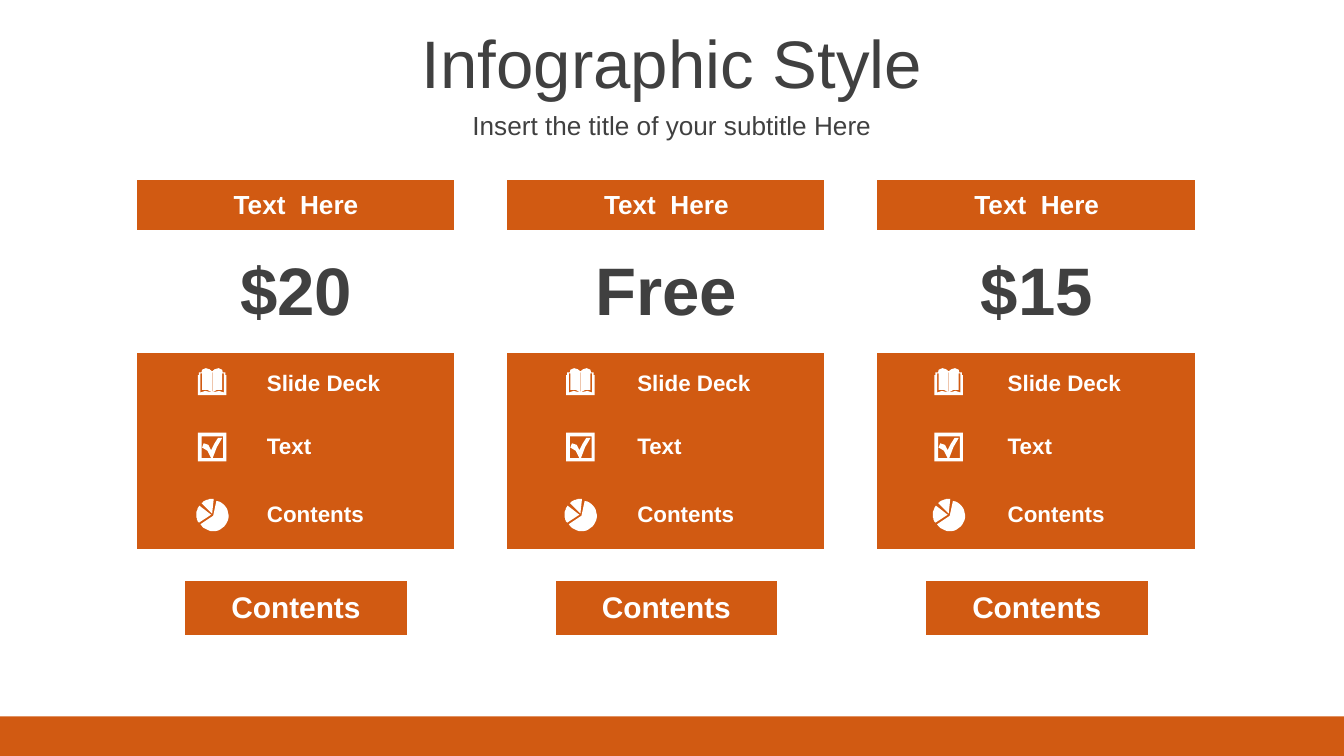
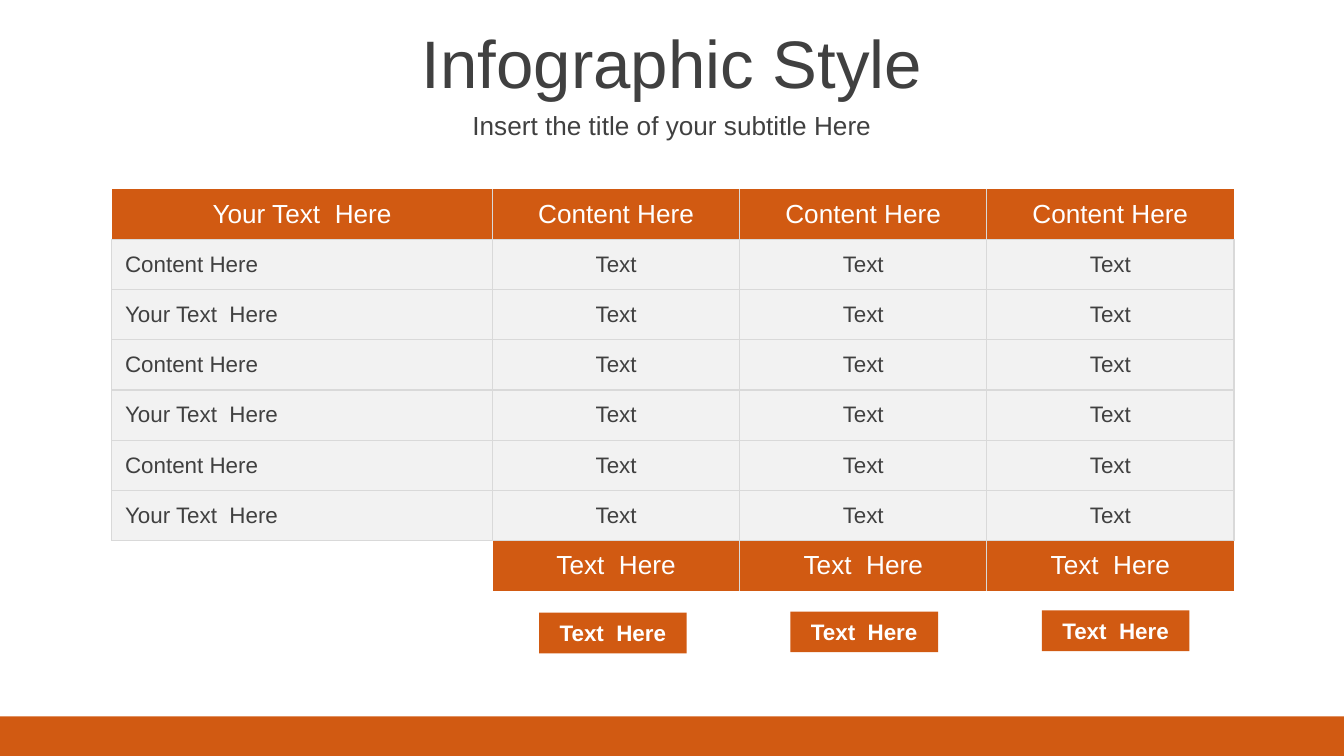
from dataclasses import dataclass
from math import cos, radians, sin

from lxml import etree
from pptx import Presentation
from pptx.dml.color import RGBColor
from pptx.enum.shapes import MSO_SHAPE
from pptx.enum.text import MSO_ANCHOR, MSO_AUTO_SIZE, PP_ALIGN
from pptx.oxml.ns import qn
from pptx.util import Cm, Pt

RECT = MSO_SHAPE.RECTANGLE
MIDDLE = MSO_ANCHOR.MIDDLE
NO_FIT = MSO_AUTO_SIZE.NONE
GROW = MSO_AUTO_SIZE.SHAPE_TO_FIT_TEXT
CENTER = PP_ALIGN.CENTER
LEFT = PP_ALIGN.LEFT

FONT = "Arial"
COLORS = {
    "accent": "D15A12",
    "ink": "404040",
    "white": "FFFFFF",
    "row": "F2F2F2",
    "grid": "D9D9D9",
}
PLAIN_TABLE = "{2D5ABB26-0587-4C30-8999-92F81FD0307C}"
SLIDE_W, SLIDE_H = 25.4, 14.29
BAND_H = 0.75
ICON_SIDE = 54

Contour = list[tuple[float, float]]


@dataclass(frozen=True)
class Style:
    size: int
    color: str
    bold: bool = False
    align: PP_ALIGN = CENTER


@dataclass(frozen=True)
class Heading:
    idx: int
    top: float
    height: float
    text: str
    style: Style


@dataclass(frozen=True)
class Icon:
    left: float
    top: float
    contours: list[Contour]


HEADINGS = [
    Heading(0, 0.36, 1.6, "Infographic Style", Style(36, "ink")),
    Heading(1, 1.96, 0.79, "Insert the title of your subtitle Here", Style(14, "ink")),
]


def rgb(name: str) -> RGBColor:
    return RGBColor.from_string(COLORS[name])


def add_text(p, text: str, style: Style) -> None:
    p.alignment = style.align
    r = p.add_run()
    r.text = text
    r.font.name = FONT
    r.font.size = Pt(style.size)
    r.font.bold = style.bold
    r.font.color.rgb = rgb(style.color)


def paint(shape, color: str) -> None:
    shape.shadow.inherit = False
    shape.fill.solid()
    shape.fill.fore_color.rgb = rgb(color)
    shape.line.fill.background()


def add_box(s, left: float, top: float, width: float, height: float):
    box = s.shapes.add_shape(RECT, Cm(left), Cm(top), Cm(width), Cm(height))
    paint(box, "accent")
    return box


def add_heading(s, heading: Heading) -> None:
    ph = s.placeholders[heading.idx]
    ph.left, ph.top = Cm(0), Cm(heading.top)
    ph.width, ph.height = Cm(SLIDE_W), Cm(heading.height)
    tf = ph.text_frame
    tf.word_wrap = True
    tf.auto_size = NO_FIT
    tf.vertical_anchor = MIDDLE
    p = tf.paragraphs[0]
    add_text(p, heading.text, heading.style)
    p.space_before = Pt(heading.style.size * 0.2)
    pPr = p._p.get_or_add_pPr()
    pPr.set("marL", "0")
    pPr.set("indent", "0")
    etree.SubElement(pPr, qn("a:buNone"))


def new_slide(prs):
    s = prs.slides.add_slide(prs.slide_layouts[1])
    for heading in HEADINGS:
        add_heading(s, heading)
    return s


def add_master_band(prs, s) -> None:
    band = add_box(s, 0, SLIDE_H - BAND_H, SLIDE_W, BAND_H)
    band.element.nvSpPr.cNvPr.set("id", "20")
    prs.slide_master.element.cSld.spTree.append(band.element)


def add_grid(s, left: float, top: float, cols: list[float], rows: list[float]):
    frame = s.shapes.add_table(len(rows), len(cols), Cm(left), Cm(top),
                               Cm(sum(cols)), Cm(sum(rows)))
    frame.element.find(".//" + qn("a:tableStyleId")).text = PLAIN_TABLE
    table = frame.table
    table.first_row = False
    table.horz_banding = False
    for col, width in zip(table.columns, cols):
        col.width = Cm(width)
    for row, height in zip(table.rows, rows):
        row.height = Cm(height)
    return table


def fill_cell(cell, color: str | None) -> None:
    if color:
        cell.fill.solid()
        cell.fill.fore_color.rgb = rgb(color)


def write_cell(cell, text: str, style: Style) -> None:
    cell.vertical_anchor = MIDDLE
    add_text(cell.text_frame.paragraphs[0], text, style)


def shrink_cell(cell) -> None:
    cell.margin_top = cell.margin_bottom = 0
    etree.SubElement(cell.text_frame.paragraphs[0]._p, qn("a:endParaRPr"), sz="800")


def shrink_empty_cells(table) -> None:
    for cell in table.iter_cells():
        if not cell.text_frame.text:
            shrink_cell(cell)


def border_cell(cell, sides: str) -> None:
    tcPr = cell._tc.get_or_add_tcPr()
    for i, side in enumerate(sides):
        ln = etree.Element(qn(f"a:ln{side}"), w=str(Pt(0.75)))
        fill = etree.SubElement(ln, qn("a:solidFill"))
        etree.SubElement(fill, qn("a:srgbClr"), val=COLORS["grid"])
        tcPr.insert(i, ln)


def mirrored(points: Contour) -> Contour:
    return [(ICON_SIDE - x, y) for x, y in reversed(points)]


def wedge(cx: float, cy: float, radius: float, start: int, end: int) -> Contour:
    steps = 24
    angles = [radians(start + (end - start) * i / steps) for i in range(steps + 1)]
    return [(cx, cy)] + [(cx + radius * cos(a), cy + radius * sin(a)) for a in angles]


BOOK_HALF = [(0, 51), (0, 13), (2, 13), (2, 8), (7, 8), (8, 3), (15, 0), (22, 2), (27, 6)]
PAGE_GAP = [(5, 10), (5, 46), (14, 43), (27, 46), (18, 41), (8, 41), (8, 10)]
SPINE = [(27, 8), (28, 8), (28, 44), (27, 44)]
FRAME = [(0, 0), (54, 0), (54, 54), (0, 54)]
AROUND_TICK = [
    (7, 7), (7, 48), (25, 48), (18, 34), (8, 28), (11, 20), (20, 23), (25, 33),
    (31, 21), (38, 10), (46, 10), (36, 27), (28, 48), (48, 48), (48, 7),
]
ICONS = [
    Icon(3.74, 6.96, [BOOK_HALF + mirrored(BOOK_HALF), PAGE_GAP, mirrored(PAGE_GAP), SPINE]),
    Icon(3.71, 9.43, [wedge(32, 32, 29, -78, 147), wedge(28, 30, 28, 147, 217),
                      wedge(30, 28, 28, 225, 277)]),
    Icon(3.74, 8.18, [FRAME, AROUND_TICK]),
]


def add_icon(s, icon: Icon, shift: float) -> None:
    first, *others = icon.contours
    builder = s.shapes.build_freeform(*first[0], scale=Cm(0.01))
    builder.add_line_segments(first[1:], close=True)
    for contour in others:
        builder.move_to(*contour[0])
        builder.add_line_segments(contour[1:], close=True)
    paint(builder.convert_to_shape(Cm(icon.left + shift), Cm(icon.top)), "white")


PRICES = ["$20", "Free", "$15"]
FEATURES = ["Slide Deck", "Text", "Contents"]
CARD_LEFT, CARD_TOP, CARD_PITCH, ICON_PITCH = 2.58, 3.4, 7, 6.96
CARD_COLS = [0.92, 1.29, 2.9, 0.89]
CARD_ROWS = [0.95, 2.33, 1.13, 1.28, 1.28, 0.61, 1.03, 0.61]
WHITE_ROWS = (1, 5, 7)
FEATURE_ROW, BUTTON_ROW = 2, 6


def card_color(row: int, col: int) -> str:
    outside_button = row == BUTTON_ROW and col in (0, 3)
    return "white" if row in WHITE_ROWS or outside_button else "accent"


def add_card(s, left: float, price: str) -> None:
    table = add_grid(s, left, CARD_TOP, CARD_COLS, CARD_ROWS)
    last_feature = FEATURE_ROW + len(FEATURES) - 1
    for row in range(len(CARD_ROWS)):
        for col in range(len(CARD_COLS)):
            fill_cell(table.cell(row, col), card_color(row, col))
        if not FEATURE_ROW <= row <= last_feature:
            table.cell(row, 1).merge(table.cell(row, 2))
    for col in (0, 3):
        table.cell(FEATURE_ROW, col).merge(table.cell(last_feature, col))
    write_cell(table.cell(0, 1), "Text  Here", Style(14, "white", True))
    write_cell(table.cell(1, 1), price, Style(36, "ink", True))
    for row, feature in enumerate(FEATURES, FEATURE_ROW):
        write_cell(table.cell(row, 2), feature, Style(12, "white", True, LEFT))
    write_cell(table.cell(BUTTON_ROW, 1), "Contents", Style(16, "white", True))
    shrink_empty_cells(table)


def build_prices(s) -> None:
    for i, price in enumerate(PRICES):
        add_card(s, CARD_LEFT + i * CARD_PITCH, price)
    for i in range(len(PRICES)):
        for icon in ICONS:
            add_icon(s, icon, i * ICON_PITCH)


PLAN_COLS = [7.2] + [4.67] * 3
PLAN_ROWS = (
    [["Your Text  Here"] + ["Content Here"] * 3]
    + [[label] + ["Text"] * 3 for label in ["Content Here", "Your Text  Here"] * 3]
    + [[""] + ["Text  Here"] * 3]
)


def plan_sides(row: int, col: int) -> str:
    last_row, last_col = len(PLAN_ROWS) - 1, len(PLAN_COLS) - 1
    if 0 < row < last_row:
        return "LRTB"
    first = 0 if row == 0 else 1
    left = "L" if col > first else ""
    right = "R" if first <= col < last_col else ""
    return left + right + ("B" if row == 0 else "T")


def build_plans(s) -> None:
    table = add_grid(s, 2.11, 3.57, PLAN_COLS, [0.95] * len(PLAN_ROWS))
    for row, texts in enumerate(PLAN_ROWS):
        edge = row in (0, len(PLAN_ROWS) - 1)
        for col, text in enumerate(texts):
            cell = table.cell(row, col)
            if text:
                align = CENTER if edge or col else LEFT
                style = Style(14, "white") if edge else Style(12, "ink", align=align)
                write_cell(cell, text, style)
                fill_cell(cell, "accent" if edge else "row")
            border_cell(cell, plan_sides(row, col))
    shrink_empty_cells(table)
    for i in range(3):
        button = add_box(s, 10.19 + i * 4.75, 11.58 - i * 0.02, 2.79, 0.77)
        tf = button.text_frame
        tf.word_wrap = True
        tf.auto_size = GROW
        add_text(tf.paragraphs[0], "Text  Here", Style(12, "white", True))


def main() -> None:
    prs = Presentation()
    prs.slide_width, prs.slide_height = Cm(SLIDE_W), Cm(SLIDE_H)
    s = new_slide(prs)
    add_master_band(prs, s)
    build_prices(s)
    build_plans(new_slide(prs))
    prs.save("out.pptx")


if __name__ == "__main__":
    main()
